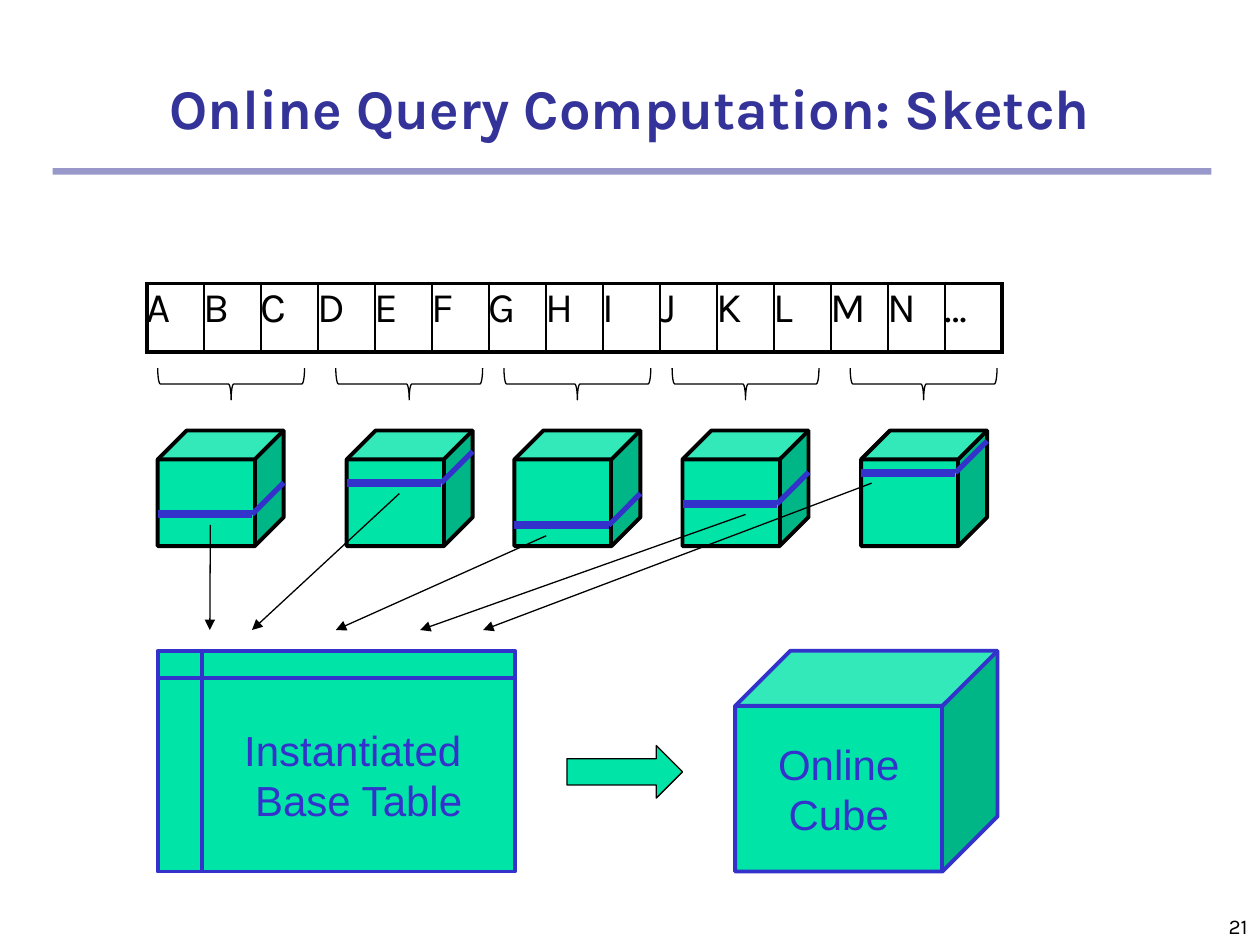
from collections import namedtuple

from lxml.etree import SubElement
from pptx import Presentation
from pptx.dml.color import RGBColor
from pptx.enum.shapes import MSO_CONNECTOR, MSO_SHAPE as Preset
from pptx.enum.text import MSO_ANCHOR as Anchor, MSO_AUTO_SIZE, PP_ALIGN as Align
from pptx.oxml.ns import qn
from pptx.util import Cm, Pt

BLACK = RGBColor(0x00, 0x00, 0x00)
NAVY = RGBColor(0x33, 0x33, 0x99)
BLUE = RGBColor(0x33, 0x33, 0xCC)
GREEN = RGBColor(0x00, 0xE4, 0xA8)

Box = namedtuple("Box", "left top width height")  # centimetres
# Brace and cube left edges, stripe depth below the cube top,
# arrow start from the cube's left edge, arrow tip
Fragment = namedtuple("Fragment", "brace_left cube_left stripe arrow_start arrow_tip")

LETTERS = "ABCDEFGHIJKLMN…"
FRAGMENTS = [
    Fragment(3.18, 3.18, 1.69, 1.06, 4.23),
    Fragment(6.77, 6.99, 1.06, 1.06, 5.08),
    Fragment(10.16, 10.37, 1.91, 0.64, 6.77),
    Fragment(13.55, 13.76, 1.48, 1.27, 8.47),
    Fragment(17.14, 17.36, 0.85, 0.21, 9.74),
]
CUBE_TOP = 8.68
STRIPE_RUN, STRIPE_RISE = 1.9, 0.64
ARROW_GAP = 0.21
ARROW_TIP_TOP = 12.7


def lengths(box):
    return [Cm(value) for value in box]


def set_font(paragraph, name, size, color):
    paragraph.font.name = name
    paragraph.font.size = Pt(size)
    paragraph.font.color.rgb = color


def add_preset(slide, preset, box, fill=None, line=None, weight=0.75):
    shape = slide.shapes.add_shape(preset, *lengths(box))
    shape.shadow.inherit = False
    if fill is None:
        shape.fill.background()
    else:
        shape.fill.solid()
        shape.fill.fore_color.rgb = fill
    if line is None:
        shape.line.fill.background()
    else:
        shape.line.color.rgb = line
        shape.line.width = Pt(weight)
    return shape


def add_line(slide, start, end, color, weight, arrow=False):
    points = [Cm(value) for value in (*start, *end)]
    connector = slide.shapes.add_connector(MSO_CONNECTOR.STRAIGHT, *points)
    connector.line.color.rgb = color
    connector.line.width = Pt(weight)
    if arrow:
        SubElement(connector.line._get_or_add_ln(), qn("a:tailEnd"), type="triangle")
    SubElement(connector._element.spPr, qn("a:effectLst"))


def add_title(slide, box):
    title = slide.shapes.title
    title.left, title.top, title.width, title.height = lengths(box)
    frame = title.text_frame
    frame.text = "Online Query Computation: Sketch"
    frame.auto_size = MSO_AUTO_SIZE.NONE
    frame.vertical_anchor = Anchor.BOTTOM
    paragraph = frame.paragraphs[0]
    paragraph.alignment = Align.CENTER
    set_font(paragraph, "Karla", 32, NAVY)
    paragraph.font.bold = True


def add_title_rule(slide, box):
    rule = add_preset(slide, Preset.RECTANGLE, box, NAVY)
    color = rule._element.spPr.find(qn("a:solidFill"))[0]
    SubElement(color, qn("a:alpha"), val="50000")


def add_page_number(slide, box):
    frame = slide.shapes.add_textbox(*lengths(box)).text_frame
    frame.word_wrap = True
    frame.vertical_anchor = Anchor.BOTTOM
    frame.text = "21"
    frame.paragraphs[0].alignment = Align.RIGHT
    set_font(frame.paragraphs[0], "Karla", 12, BLACK)


def set_borders(cell, weights):
    """Draw the left, right, top and bottom borders, in that order."""
    properties = cell._tc.get_or_add_tcPr()
    for index, (side, weight) in enumerate(zip(("lnL", "lnR", "lnT", "lnB"), weights)):
        border = properties.makeelement(qn(f"a:{side}"), {"w": str(Pt(weight))})
        fill = SubElement(border, qn("a:solidFill"))
        SubElement(fill, qn("a:srgbClr"), val=str(BLACK))
        properties.insert(index, border)


def add_dimension_row(slide, box):
    table = slide.shapes.add_table(1, len(LETTERS), *lengths(box)).table
    table.first_row = table.horz_banding = False
    table.rows[0].height = Cm(box.height)
    last = len(LETTERS) - 1
    for index, letter in enumerate(LETTERS):
        table.columns[index].width = Cm(box.width / len(LETTERS))
        cell = table.cell(0, index)
        cell.margin_left = cell.margin_right = cell.margin_top = cell.margin_bottom = 0
        cell.fill.background()
        cell.text = letter
        set_font(cell.text_frame.paragraphs[0], "Karla", 24, BLACK)
        left = 2.25 if index == 0 else 1
        right = 2.25 if index == last else 1
        set_borders(cell, (left, right, 2.25, 2.25))


def add_brace(slide, box):
    """Fill the box with a brace that opens upwards."""
    upright = Box(
        box.left + (box.width - box.height) / 2,
        box.top + (box.height - box.width) / 2,
        box.height,
        box.width,
    )
    brace = add_preset(slide, Preset.LEFT_BRACE, upright, line=BLACK)
    brace.rotation = 270


def add_fragment_cube(slide, box, stripe):
    add_preset(slide, Preset.CUBE, box, GREEN, BLACK, 2.25)
    level = box.top + stripe
    edge = (box.left + STRIPE_RUN, level)
    right = (box.left + box.width, level - STRIPE_RISE)
    add_line(slide, (box.left, level), edge, BLUE, 4.5)
    add_line(slide, edge, right, BLUE, 3)


def add_labelled_shape(slide, preset, box, lines):
    shape = add_preset(slide, preset, box, GREEN, BLUE, 2.25)
    frame = shape.text_frame
    frame.vertical_anchor = Anchor.MIDDLE
    frame.text = "\n".join(lines)
    for paragraph in frame.paragraphs:
        paragraph.alignment = Align.CENTER
        set_font(paragraph, "Arial", 24, BLUE)


def add_fragment_arrow(slide, fragment):
    start = (
        fragment.cube_left + fragment.arrow_start,
        CUBE_TOP + fragment.stripe + ARROW_GAP,
    )
    add_line(slide, start, (fragment.arrow_tip, ARROW_TIP_TOP), BLACK, 0.75, arrow=True)


def main():
    presentation = Presentation()
    presentation.slide_width, presentation.slide_height = Cm(25.4), Cm(19.05)
    slide = presentation.slides.add_slide(presentation.slide_layouts[5])

    add_title_rule(slide, Box(1.06, 3.39, 23.36, 0.13))
    add_page_number(slide, Box(20.11, 17.78, 5.29, 1.27))
    add_title(slide, Box(0, 1.06, 25.4, 1.9))
    add_dimension_row(slide, Box(2.96, 5.72, 17.25, 1.38))
    for fragment in FRAGMENTS:
        add_brace(slide, Box(fragment.brace_left, 7.42, 2.96, 0.64))
        cube = Box(fragment.cube_left, CUBE_TOP, 2.54, 2.33)
        add_fragment_cube(slide, cube, fragment.stripe)
    add_labelled_shape(slide, Preset.CUBE, Box(14.82, 13.12, 5.29, 4.45), ["Online", "Cube"])
    add_preset(slide, Preset.RIGHT_ARROW, Box(11.43, 15.03, 2.33, 1.06), GREEN, BLACK)
    add_labelled_shape(slide, Preset.FLOWCHART_INTERNAL_STORAGE,
                       Box(3.18, 13.12, 7.2, 4.45), ["Instantiated ", "Base Table"])
    for fragment in FRAGMENTS:
        add_fragment_arrow(slide, fragment)

    presentation.save("out.pptx")


if __name__ == "__main__":
    main()
